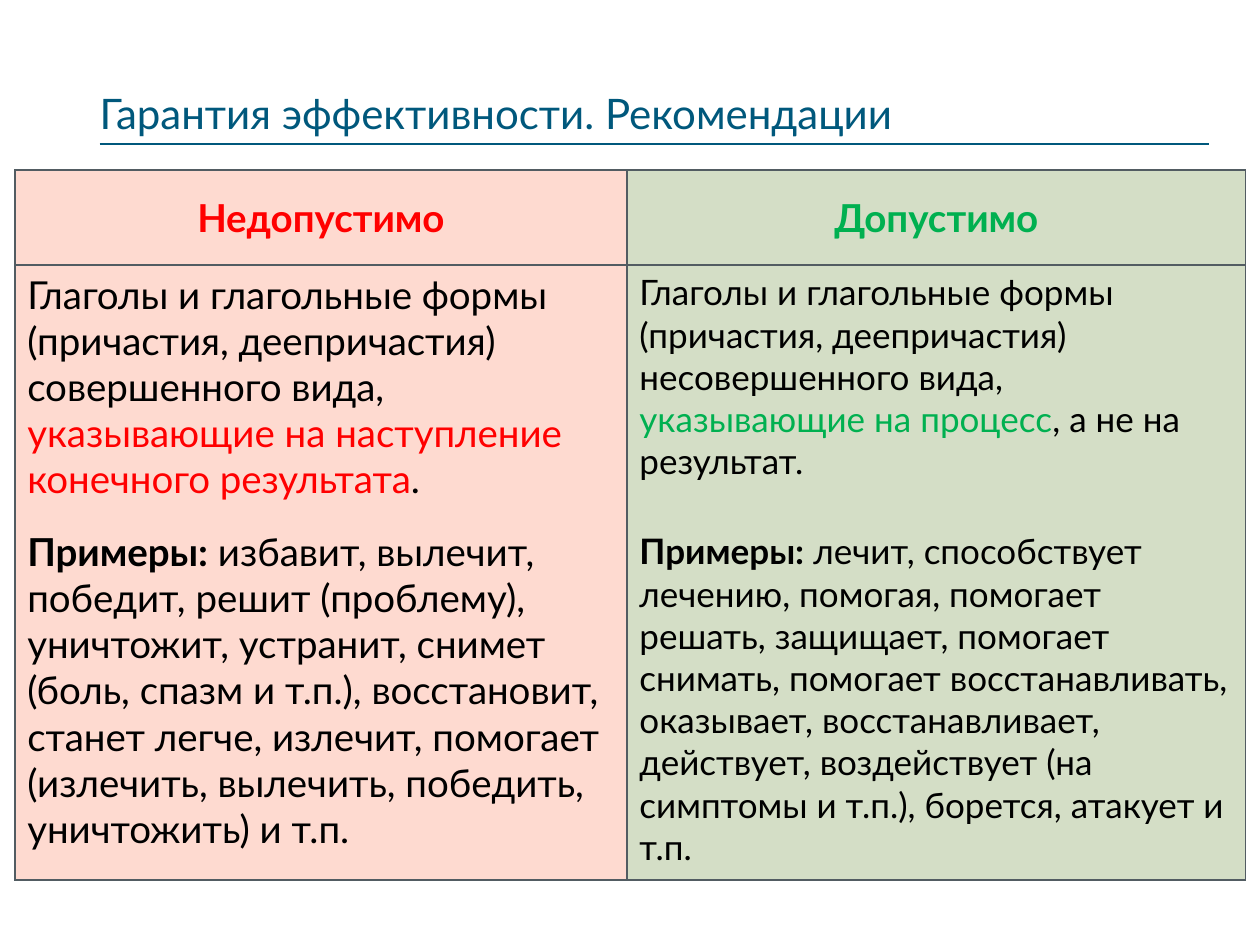
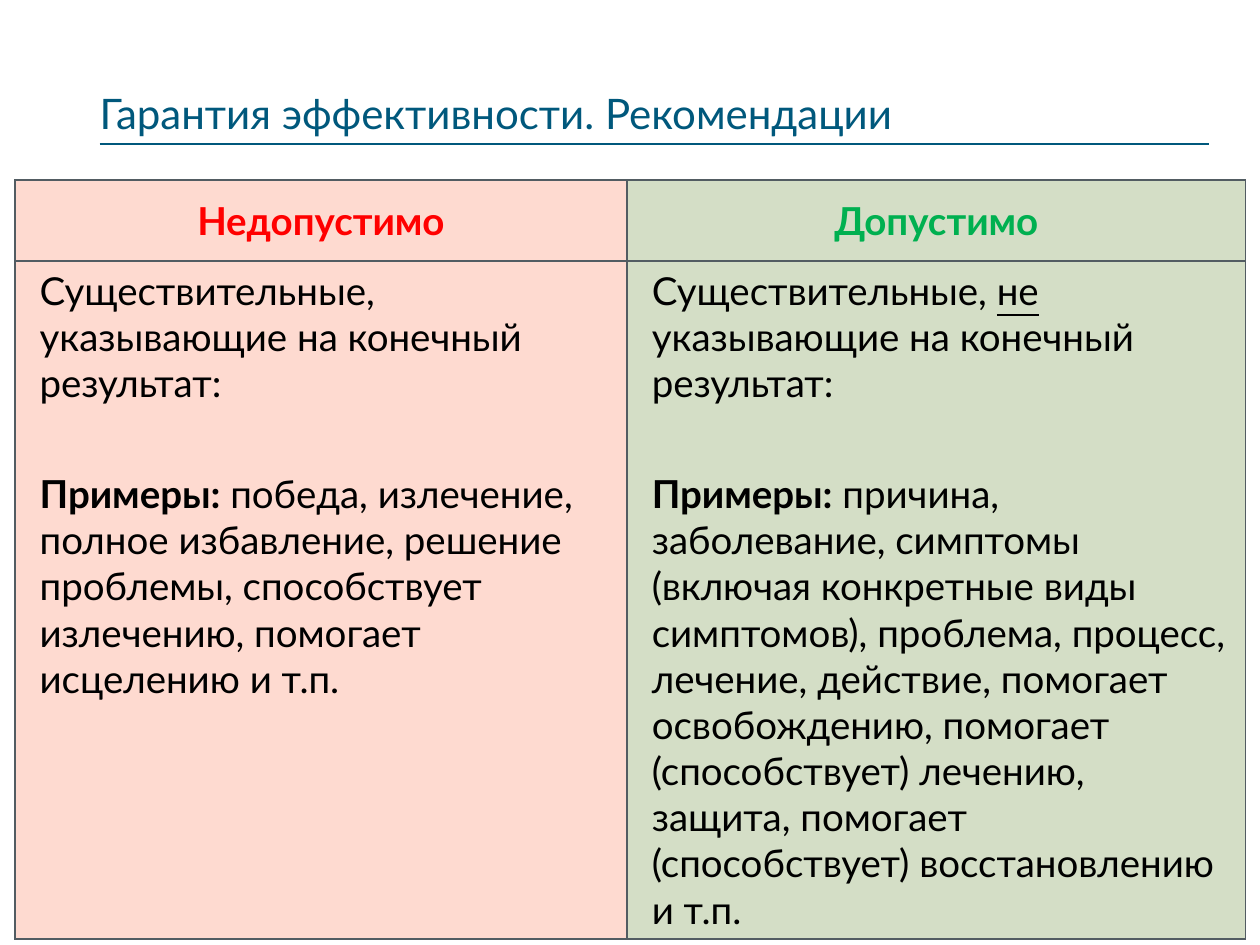
from dataclasses import dataclass

from lxml.etree import SubElement
from pptx import Presentation
from pptx.dml.color import RGBColor as Rgb
from pptx.enum.shapes import MSO_CONNECTOR as Connector
from pptx.enum.text import MSO_ANCHOR as Anchor, MSO_AUTO_SIZE as AutoSize, PP_ALIGN as Align
from pptx.oxml.ns import qn
from pptx.util import Cm, Pt


@dataclass(frozen=True)
class Theme:
    font: str = "Lato"
    heading: Rgb = Rgb(0x00, 0x58, 0x7C)
    border: Rgb = Rgb(0x52, 0x5C, 0x62)
    ink: Rgb = Rgb(0, 0, 0)
    banned: Rgb = Rgb(0xFF, 0, 0)
    allowed: Rgb = Rgb(0, 0xB0, 0x50)
    banned_fill: Rgb = Rgb(0xFE, 0xDA, 0xD0)
    allowed_fill: Rgb = Rgb(0xD4, 0xDE, 0xC6)
    title_size: int = 24
    text_size: int = 22
    dense_size: int = 20
    line_width: int = 1


THEME = Theme()
TITLE = "Гарантия эффективности. Рекомендации"
HEADINGS = [("Недопустимо", THEME.banned, THEME.banned_fill),
            ("Допустимо", THEME.allowed, THEME.allowed_fill)]
EXAMPLES_LABEL = ("Примеры:", {"bold": True})
TITLE_BOX = (Cm(2.01), Cm(0.41), Cm(21.39), Cm(2.39))
RULE_END, RULE_GAP = Cm(24.38), Cm(0.1)
TABLE_LEFT, COLUMN_WIDTHS = Cm(0.3), (Cm(12.34), Cm(12.47))

VERBS = {
    "top": Cm(3.43), "row_heights": (Cm(1.91), Cm(12.4)), "text_inset": Cm(0.25),
    "rules": [
        {"gap": 15, "size": THEME.text_size, "paragraphs": [
            [("Глаголы и глагольные формы (причастия, деепричастия) совершенного вида, ", {}),
             ("указывающие на наступление конечного результата", {"color": THEME.banned}),
             (".", {})],
            [EXAMPLES_LABEL,
             (" избавит, вылечит, победит, решит (проблему), уничтожит, устранит, снимет "
              "(боль, спазм и т.п.), восстановит, станет легче, излечит, помогает (излечить, "
              "вылечить, победить, уничтожить) и т.п.", {})]]},
        {"gap": 27.4, "size": THEME.dense_size, "paragraphs": [
            [("Глаголы и глагольные формы (причастия, деепричастия) несовершенного вида, ", {}),
             ("указывающие на процесс", {"color": THEME.allowed}),
             (", а не на результат.", {})],
            [EXAMPLES_LABEL,
             (" лечит, способствует лечению, помогая, помогает решать, защищает, помогает "
              "снимать, помогает восстанавливать, оказывает, восстанавливает, действует, "
              "воздействует (на симптомы и т.п.), борется, атакует и т.п.", {})]]},
    ],
}

NOUNS = {
    "top": Cm(3.63), "row_heights": (Cm(1.63), Cm(13.67)), "text_inset": Cm(0.5),
    "rules": [
        {"gap": 37, "size": THEME.text_size, "paragraphs": [
            [("Существительные, указывающие на конечный результат:", {})],
            [EXAMPLES_LABEL,
             (" победа, излечение, полное избавление, решение проблемы, способствует "
              "излечению, помогает исцелению и т.п.", {})]]},
        {"gap": 37, "size": THEME.text_size, "paragraphs": [
            [("Существительные, ", {}), ("не", {"underline": True}),
             (" указывающие на конечный результат:", {})],
            [EXAMPLES_LABEL,
             (" причина, заболевание, симптомы (включая конкретные виды симптомов), проблема, "
              "процесс, лечение, действие, помогает освобождению, помогает (способствует) "
              "лечению, защита, помогает (способствует) восстановлению и т.п.", {})]]},
    ],
}


def apply(target, **values):
    """Set each named attribute of target."""
    for attribute, value in values.items():
        setattr(target, attribute, value)


def add_words(paragraph, words, size, color=THEME.ink, **emphasis):
    run = paragraph.add_run()
    run.text = words
    run.font.color.rgb = color
    apply(run.font, name=THEME.font, size=Pt(size), **{"bold": False, **emphasis})


def add_heading(slide, box):
    """Fill the title placeholder and draw the rule beneath it."""
    left, top, width, height = box
    title = slide.shapes.title
    apply(title, left=left, top=top, width=width, height=height)
    apply(title.text_frame, margin_left=0, margin_right=0, margin_top=0, margin_bottom=0,
          word_wrap=True, auto_size=AutoSize.NONE, vertical_anchor=Anchor.BOTTOM)
    paragraph = title.text_frame.paragraphs[0]
    apply(paragraph, alignment=Align.LEFT, line_spacing=0.95)
    add_words(paragraph, TITLE, THEME.title_size, THEME.heading)

    rule_y = top + height + RULE_GAP
    rule = slide.shapes.add_connector(Connector.STRAIGHT, left, rule_y, RULE_END, rule_y)
    rule.line.color.rgb = THEME.heading
    rule.line.width = Pt(THEME.line_width)
    SubElement(rule._element.spPr, qn("a:effectLst"))


def style_cell(cell, fill):
    properties = cell._tc.get_or_add_tcPr()
    for side in ("lnL", "lnR", "lnT", "lnB"):
        edge = SubElement(properties, qn(f"a:{side}"), w=str(Pt(THEME.line_width)))
        edge_fill = SubElement(edge, qn("a:solidFill"))
        SubElement(edge_fill, qn("a:srgbClr"), val=str(THEME.border))
    cell.fill.solid()
    cell.fill.fore_color.rgb = fill


def fill_rule(cell, rule, inset):
    """Write the rule and its examples, set apart by paragraph spacing."""
    apply(cell, margin_left=inset, vertical_anchor=Anchor.TOP)
    for index, pieces in enumerate(rule["paragraphs"]):
        frame = cell.text_frame
        paragraph = frame.add_paragraph() if index else frame.paragraphs[0]
        apply(paragraph, alignment=Align.LEFT, space_before=Pt(rule["gap"] if index else 0))
        for words, emphasis in pieces:
            add_words(paragraph, words, rule["size"], **emphasis)


def add_comparison(slide, topic, left, widths):
    heights = topic["row_heights"]
    table = slide.shapes.add_table(2, 2, left, topic["top"], sum(widths), sum(heights)).table
    apply(table, first_row=False, horz_banding=False)
    for row, height in zip(table.rows, heights):
        row.height = height
    for index, (heading, color, fill) in enumerate(HEADINGS):
        table.columns[index].width = widths[index]
        heading_cell, rule_cell = table.cell(0, index), table.cell(1, index)
        for cell in (heading_cell, rule_cell):
            style_cell(cell, fill)
        heading_cell.vertical_anchor = Anchor.MIDDLE
        paragraph = heading_cell.text_frame.paragraphs[0]
        paragraph.alignment = Align.CENTER
        add_words(paragraph, heading, THEME.text_size, color, bold=True)
        fill_rule(rule_cell, topic["rules"][index], topic["text_inset"])


def add_recommendations(deck, topic):
    title_only = deck.slide_layouts[5]
    slide = deck.slides.add_slide(title_only)
    add_heading(slide, TITLE_BOX)
    add_comparison(slide, topic, TABLE_LEFT, COLUMN_WIDTHS)


def main():
    deck = Presentation()
    apply(deck, slide_width=Cm(25.4), slide_height=Cm(19.05))
    for topic in (VERBS, NOUNS):
        add_recommendations(deck, topic)
    deck.save("out.pptx")


if __name__ == "__main__":
    main()
